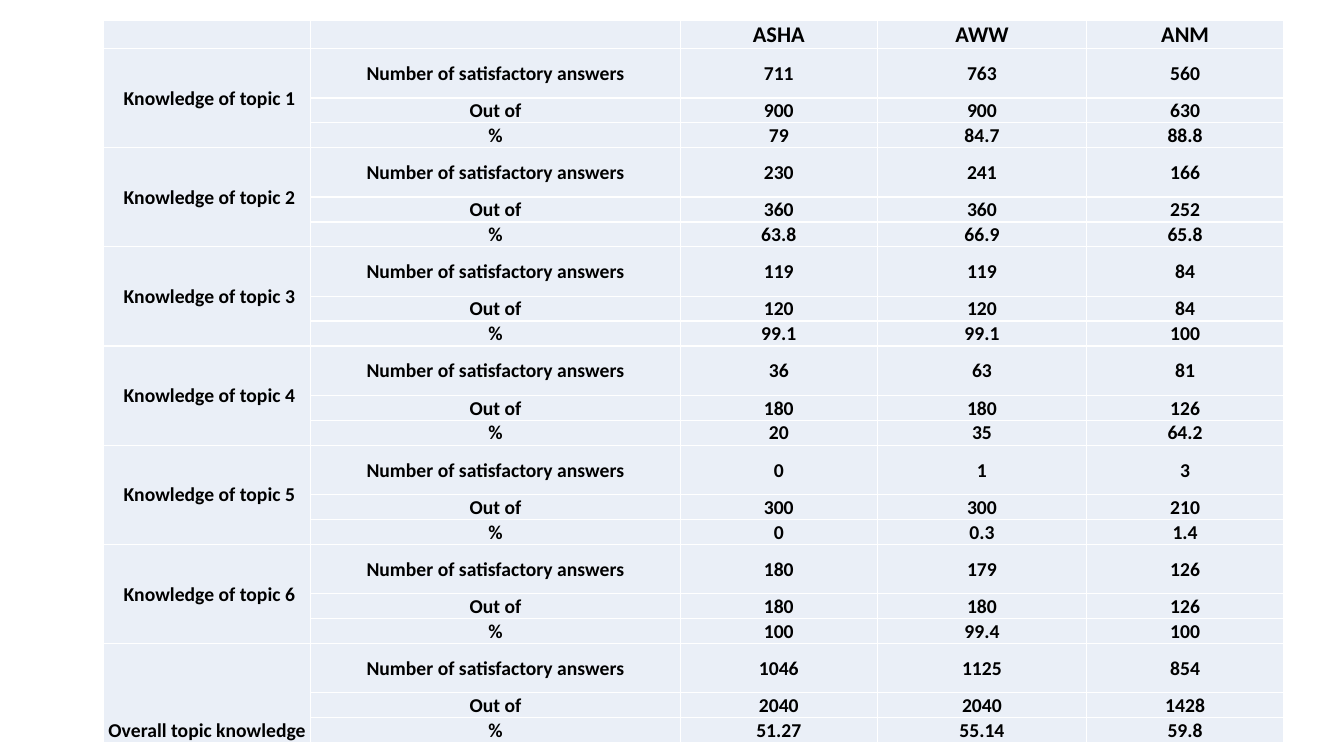
from lxml import etree
from pptx import Presentation
from pptx.dml.color import RGBColor
from pptx.enum import text
from pptx.oxml import ns
from pptx.util import Inches, Pt

PALE_BLUE = RGBColor(0xEA, 0xEF, 0xF7)
BLACK = RGBColor(0, 0, 0)
WHITE = RGBColor(0xFF, 0xFF, 0xFF)

WORKERS = ["ASHA", "AWW", "ANM"]
MEASURES = ["Number of satisfactory answers", "Out of", "%"]
RESULTS = {
    " Knowledge of topic 1": [["711", "763", "560"], ["900", "900", "630"], ["79", "84.7", "88.8"]],
    " Knowledge of topic 2": [["230", "241", "166"], ["360", "360", "252"], ["63.8", "66.9", "65.8"]],
    " Knowledge of topic 3": [["119", "119", "84"], ["120", "120", "84"], ["99.1", "99.1", "100"]],
    " Knowledge of topic 4": [["36", "63", "81"], ["180", "180", "126"], ["20", "35", "64.2"]],
    " Knowledge of topic 5": [["0", "1", "3"], ["300", "300", "210"], ["0", "0.3", "1.4"]],
    " Knowledge of topic 6": [["180", "179", "126"], ["180", "180", "126"], ["100", "99.4", "100"]],
    "Overall topic knowledge": [["1046", "1125", "854"], ["2040", "2040", "1428"], ["51.27", "55.14", "59.8"]],
}
COLUMN_WIDTHS = [2.05, 3.67, 1.95, 2.08, 1.95]
ROW_HEIGHTS = [0.24] + [0.49, 0.21, 0.21] * len(RESULTS)


def write_cell(cell, words, size=14, anchor=text.MSO_ANCHOR.MIDDLE):
    cell.margin_left = cell.margin_top = cell.margin_right = Inches(0.01)
    cell.margin_bottom = 0
    cell.vertical_anchor = anchor
    cell.fill.solid()
    cell.fill.fore_color.rgb = PALE_BLUE
    paragraph = cell.text_frame.paragraphs[0]
    paragraph.alignment = text.PP_ALIGN.CENTER
    if words:
        run = paragraph.add_run()
        run.text = words
        run.font.name = "Calibri"
        run.font.size = Pt(size)
        run.font.bold = True
        run.font.color.rgb = BLACK
    else:
        paragraph._p.get_or_add_endParaRPr().set("sz", str(size * 100))
    properties = cell._tc.get_or_add_tcPr()
    for index, side in enumerate(["lnL", "lnR", "lnT", "lnB"]):
        border = etree.Element(ns.qn(f"a:{side}"), w=str(Pt(1)))
        fill = etree.SubElement(border, ns.qn("a:solidFill"))
        etree.SubElement(fill, ns.qn("a:srgbClr"), val=str(WHITE))
        properties.insert(index, border)


presentation = Presentation()
presentation.slide_width = Inches(13.33)
presentation.slide_height = Inches(7.5)
slide = presentation.slides.add_slide(presentation.slide_layouts[6])

table = slide.shapes.add_table(
    len(ROW_HEIGHTS), len(COLUMN_WIDTHS),
    Inches(1.03), Inches(0.2), Inches(sum(COLUMN_WIDTHS)), Inches(sum(ROW_HEIGHTS)),
).table
table.first_row = False
table.horz_banding = False
for column, width in zip(table.columns, COLUMN_WIDTHS):
    column.width = Inches(width)
for row, height in zip(table.rows, ROW_HEIGHTS):
    row.height = Inches(height)

for column_index, heading in enumerate(["", ""] + WORKERS):
    write_cell(table.cell(0, column_index), heading, size=16)

for topic_index, (topic, values) in enumerate(RESULTS.items()):
    first_row = 1 + topic_index * len(MEASURES)
    is_overall = topic_index == len(RESULTS) - 1
    anchor = text.MSO_ANCHOR.BOTTOM if is_overall else text.MSO_ANCHOR.MIDDLE
    for offset, (measure, counts) in enumerate(zip(MEASURES, values)):
        row_index = first_row + offset
        write_cell(table.cell(row_index, 0), "" if offset else topic, anchor=anchor)
        for column_index, words in enumerate([measure] + counts, start=1):
            write_cell(table.cell(row_index, column_index), words)
    table.cell(first_row, 0).merge(table.cell(first_row + len(MEASURES) - 1, 0))

presentation.save("out.pptx")
